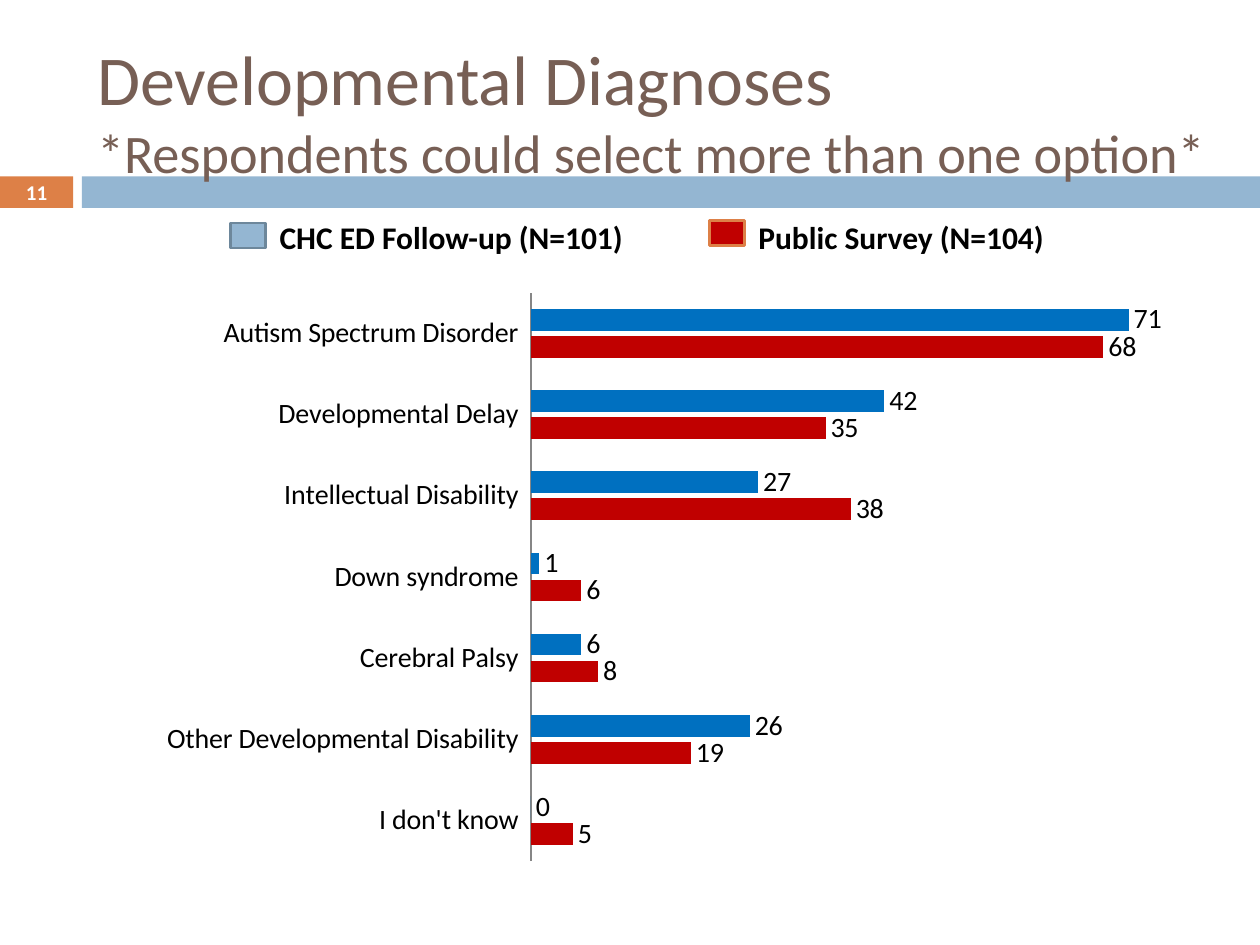
from dataclasses import dataclass

from pptx import Presentation
from pptx.chart.data import CategoryChartData
from pptx.dml.color import RGBColor
from pptx.enum.chart import XL_CHART_TYPE, XL_LABEL_POSITION, XL_TICK_LABEL_POSITION, XL_TICK_MARK
from pptx.enum.shapes import MSO_SHAPE
from pptx.enum.text import MSO_ANCHOR, MSO_AUTO_SIZE, PP_ALIGN
from pptx.oxml import parse_xml
from pptx.oxml.ns import nsdecls
from pptx.util import Inches, Pt


@dataclass(frozen=True)
class Theme:
    font: str = "Calibri"
    brown: str = "775F55"
    orange: str = "DD8047"
    light_blue: str = "94B6D2"
    slate: str = "6D879B"
    blue: str = "0070C0"
    red: str = "C00000"
    axis_gray: str = "868686"
    black: str = "000000"
    white: str = "FFFFFF"
    title_size: float = 40
    subtitle_size: float = 31
    legend_size: float = 18
    label_size: float = 16
    chart_size: float = 14
    number_size: float = 12


def apply(target, values):
    for name, value in values.items():
        setattr(target, name, value)


def place(shape, left, top, width, height):
    names = ("left", "top", "width", "height")
    apply(shape, dict(zip(names, map(Inches, (left, top, width, height)))))


class SlideBuilder:
    def __init__(self, slide, theme):
        self.slide = slide
        self.theme = theme

    def style_font(self, font, size, color, bold=False):
        apply(font, {"name": self.theme.font, "size": Pt(size), "bold": bold})
        font.color.rgb = RGBColor.from_string(color)

    def title(self, box, lines):
        heading = self.slide.shapes.title
        place(heading, *box)
        heading.element.getparent().append(heading.element)
        frame = heading.text_frame
        frame.text = "\n".join(text for text, size in lines)
        apply(frame, {"word_wrap": True, "auto_size": MSO_AUTO_SIZE.NONE,
                      "vertical_anchor": MSO_ANCHOR.MIDDLE})
        for paragraph, (text, size) in zip(frame.paragraphs, lines):
            apply(paragraph, {"alignment": PP_ALIGN.LEFT, "space_before": Pt(0)})
            self.style_font(paragraph.runs[0].font, size, self.theme.brown)

    def rectangle(self, box, fill, line=None):
        block = self.slide.shapes.add_shape(MSO_SHAPE.RECTANGLE, *map(Inches, box))
        block.shadow.inherit = False
        block.fill.solid()
        block.fill.fore_color.rgb = RGBColor.from_string(fill)
        if line:
            block.line.color.rgb = RGBColor.from_string(line)
            block.line.width = Pt(1.5)
        else:
            block.line.fill.background()

    def text(self, box, words, size, color, align=PP_ALIGN.LEFT, anchor=MSO_ANCHOR.TOP):
        frame = self.slide.shapes.add_textbox(*map(Inches, box)).text_frame
        apply(frame, {"word_wrap": True, "vertical_anchor": anchor})
        if align == PP_ALIGN.CENTER:
            apply(frame, dict.fromkeys(
                ("margin_left", "margin_right", "margin_top", "margin_bottom"), 0))
        paragraph = frame.paragraphs[0]
        apply(paragraph, {"text": words, "alignment": align})
        self.style_font(paragraph.runs[0].font, size, color, bold=True)

    def bar_chart(self, box, categories, series_values, colors, plot_box):
        theme = self.theme
        data = CategoryChartData()
        data.categories = categories
        for name, values in series_values.items():
            data.add_series(name, values)
        chart = self.slide.shapes.add_chart(
            XL_CHART_TYPE.BAR_CLUSTERED, *map(Inches, box), data).chart
        apply(chart, {"has_legend": False, "has_title": False})
        self.style_font(chart.font, theme.chart_size, theme.black)

        category_axis = chart.category_axis
        apply(category_axis, {"reverse_order": True,
                              "major_tick_mark": XL_TICK_MARK.NONE,
                              "minor_tick_mark": XL_TICK_MARK.NONE,
                              "tick_label_position": XL_TICK_LABEL_POSITION.LOW})
        self.style_font(category_axis.tick_labels.font, theme.label_size, theme.black)
        category_axis.format.line.color.rgb = RGBColor.from_string(theme.axis_gray)
        apply(chart.value_axis, {"minimum_scale": 0, "maximum_scale": 80,
                                 "has_major_gridlines": False, "visible": False})

        plot = chart.plots[0]
        apply(plot, {"gap_width": 150, "overlap": -25, "vary_by_categories": False})
        for series, color in zip(plot.series, colors):
            series.format.fill.solid()
            series.format.fill.fore_color.rgb = RGBColor.from_string(color)
            labels = series.data_labels
            apply(labels, {"show_value": True, "position": XL_LABEL_POSITION.OUTSIDE_END})
            self.style_font(labels.font, theme.label_size, theme.black)
        self.plot_layout(chart, plot_box)

    def plot_layout(self, chart, plot_box):
        settings = [("layoutTarget", "inner"), ("xMode", "edge"), ("yMode", "edge")]
        settings += zip("xywh", plot_box)
        entries = "".join(f'<c:{tag} val="{value}"/>' for tag, value in settings)
        layout = parse_xml(f'<c:layout {nsdecls("c")}><c:manualLayout>{entries}'
                           '</c:manualLayout></c:layout>')
        plot_area = chart.plots[0]._element.getparent()
        for automatic in plot_area.xpath("c:layout"):
            plot_area.remove(automatic)
        plot_area.insert(0, layout)


def main():
    theme = Theme()
    deck = Presentation()
    apply(deck, {"slide_width": Inches(10), "slide_height": Inches(7.5)})
    builder = SlideBuilder(deck.slides.add_slide(deck.slide_layouts[5]), theme)

    builder.rectangle((0, 1.4, 0.58, 0.25), theme.orange)
    builder.rectangle((0.65, 1.4, 9.35, 0.25), theme.light_blue)
    builder.title((0.67, 0.33, 9, 1.08), [
        ("Developmental Diagnoses", theme.title_size),
        ("*Respondents could select more than one option*", theme.subtitle_size),
    ])
    builder.text((0, 1.39, 0.58, 0.27), "11", theme.number_size, theme.white,
                 PP_ALIGN.CENTER, MSO_ANCHOR.MIDDLE)

    builder.bar_chart(
        (0.39, 2.17, 9.17, 4.67),
        ["Autism Spectrum Disorder", "Developmental Delay", "Intellectual Disability",
         "Down syndrome", "Cerebral Palsy", "Other Developmental Disability",
         "I don't know"],
        {"Series 1": (71, 42, 27, 1, 6, 26, 0), "Series 2": (68, 35, 38, 6, 8, 19, 5)},
        (theme.blue, theme.red),
        (0.417, 0.033, 0.583, 0.967),
    )

    legend = [
        ("CHC ED Follow-up (N=101)", 1.83, 1.77, theme.light_blue, theme.slate),
        ("Public Survey (N=104)", 5.63, 1.75, theme.red, theme.orange),
    ]
    for words, left, top, fill, line in legend:
        builder.rectangle((left, top, 0.28, 0.2), fill, line)
        builder.text((left + 0.29, 1.68, 3.69, 0.4), words, theme.legend_size, theme.black)

    deck.save("out.pptx")


if __name__ == "__main__":
    main()
